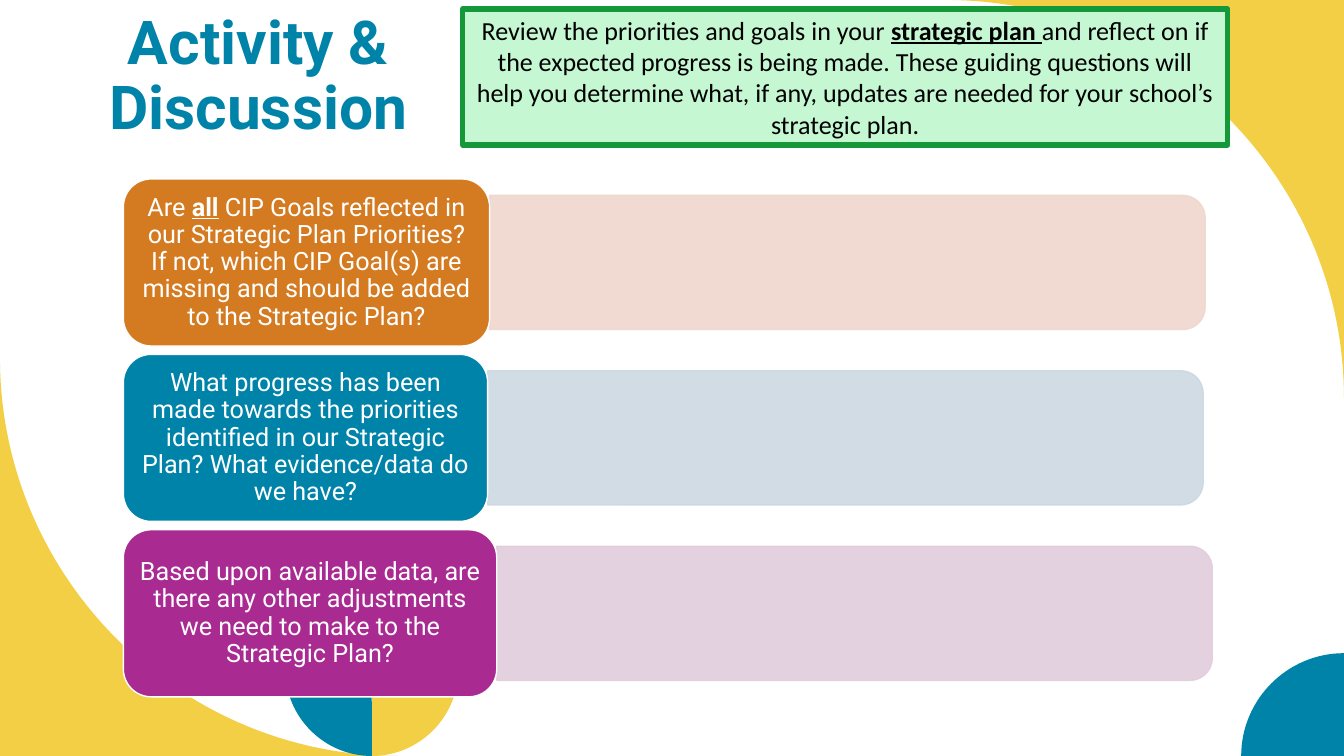
import pptx
import pptx.dml.color
import pptx.enum.shapes
import pptx.enum.text
import pptx.oxml
import pptx.oxml.ns
import pptx.util

Cm = pptx.util.Cm
Pt = pptx.util.Pt
SHAPE = pptx.enum.shapes.MSO_SHAPE
qn = pptx.oxml.ns.qn

WIDTH, HEIGHT = 33.87, 19.05
COLORS = {
    "yellow": "F3CF45", "teal": "0083A9", "white": "FFFFFF", "black": "000000",
    "mint": "C4F7D2", "green": "159839", "orange": "D47B22", "plum": "A92A91",
    "peach": "EFD7CD", "mist": "CCD9E2", "pink": "E2CDDC",
}

# Pill width, pill colour, bar colour, text runs as (text, emphasis)
ROWS = [
    (9.23, "orange", "peach", [
        ("Are ", False), ("all", True),
        (" CIP Goals reflected in our Strategic Plan Priorities? If not, which "
         "CIP Goal(s) are missing and should be added to the Strategic Plan?", False)]),
    (9.18, "teal", "mist", [
        ("What progress has been made towards the priorities identified in our "
         "Strategic Plan? What evidence/data do we have?", False)]),
    (9.41, "plum", "pink", [
        ("Based upon available data, are there any other adjustments we need to "
         "make to the Strategic Plan?", False)]),
]
PROMPT = [
    ("Review the priorities and goals in your ", False), ("strategic plan ", True),
    ("and reflect on if the expected progress is being made. These guiding "
     "questions will help you determine what, if any, updates are needed for "
     "your school’s strategic plan.", False),
]
LEFT, TOP, TALL, STEP = 3.11, 4.51, 4.21, 4.42
BAR_WIDE, BAR_TALL = 18.03, 3.38
ROUND = 0.55  # reach of the handles of a quarter circle


def color(name):
    return pptx.dml.color.RGBColor.from_string(COLORS[name])


def paint(shape, fill, line=None, weight=1):
    shape.shadow.inherit = False
    shape.fill.solid()
    shape.fill.fore_color.rgb = color(fill)
    if line:
        shape.line.color.rgb = color(line)
        shape.line.width = Pt(weight)
    else:
        shape.line.fill.background()


def fade(shape, percent):
    """Set the opacity of the fill and the line."""
    for node in shape._element.spPr.iter(qn("a:srgbClr")):
        alpha = pptx.oxml.parse_xml(
            f'<a:alpha {pptx.oxml.ns.nsdecls("a")} val="{percent * 1000}"/>')
        node.append(alpha)


def write(shape, runs, font, size, ink, margins, space=1.0, bold=False):
    """Fill a shape with centred runs; emphasis is bold and underlined."""
    frame = shape.text_frame
    frame.word_wrap = True
    frame.vertical_anchor = pptx.enum.text.MSO_ANCHOR.MIDDLE
    frame.margin_left = frame.margin_right = Cm(margins[0])
    frame.margin_top = frame.margin_bottom = Cm(margins[1])
    para = frame.paragraphs[0]
    para.alignment = pptx.enum.text.PP_ALIGN.CENTER
    para.line_spacing = space
    for text, strong in runs:
        run = para.add_run()
        run.text = text
        run.font.name = font
        run.font.size = Pt(size)
        run.font.color.rgb = color(ink)
        run.font.bold = bold or strong
        run.font.underline = strong


def curve(start, corner, end):
    """Two handles and the end point of a quarter circle bulging to a corner."""
    grips = [tuple(p + (c - p) * ROUND for p, c in zip(spot, corner))
             for spot in (start, end)]
    return grips + [end]


def blob(slide, start, parts, fill):
    """Draw an outline whose parts are single points or quarter circles."""
    spots = [(Cm(x), Cm(y)) for part in parts for x, y in part]
    form = slide.shapes.build_freeform(Cm(start[0]), Cm(start[1]), scale=1.0)
    form.add_line_segments(spots, close=True)
    shape = form.convert_to_shape()
    lines = list(shape._element.spPr.iter(qn("a:lnTo")))
    for part in parts:
        group, lines = lines[:len(part)], lines[len(part):]
        if len(group) == 3:
            bend = pptx.oxml.parse_xml(
                f'<a:cubicBezTo {pptx.oxml.ns.nsdecls("a")}/>')
            group[0].addprevious(bend)
            for line in group:
                bend.append(line[0])
                line.getparent().remove(line)
    paint(shape, fill)


def wedge(slide, tip, start, bulge, end, fill):
    blob(slide, tip, [[start], curve(start, bulge, end)], fill)


def decor(slide):
    big, small, leaf, stem = 10.03, 2.59, 2.18, 9.37
    right, low = WIDTH - big, HEIGHT - big
    wedge(slide, (WIDTH, 0), (right, 0), (WIDTH, 0), (WIDTH, big), "yellow")
    wedge(slide, (0, HEIGHT), (0, low), (0, HEIGHT), (big, HEIGHT), "yellow")
    edge, rim = WIDTH - small, HEIGHT - small
    wedge(slide, (WIDTH, HEIGHT), (edge, HEIGHT), (edge, rim), (WIDTH, rim), "teal")
    top, side, neck = 15.52, HEIGHT - leaf, 17.7
    for x, fill in ((stem + leaf, "yellow"), (stem - leaf, "teal")):
        blob(slide, (x, top), [
            [(x, side)],
            curve((x, side), (x, HEIGHT), (stem, HEIGHT)),
            [(stem, neck)],
            curve((stem, neck), (stem, top), (x, top)),
        ], fill)


def header(slide):
    box = slide.shapes.add_shape(SHAPE.RECTANGLE, Cm(11.66), Cm(0.23), Cm(19.28), Cm(3.42))
    paint(box, "mint", "green", 4)
    write(box, PROMPT, "Calibri", 18.6, "black", (0.25, 0.13))
    title = slide.shapes.add_textbox(Cm(1.48), Cm(0.24), Cm(10.06), Cm(3.42))
    write(title, [("Activity & Discussion", False)], "Roboto", 43.2, "teal",
          (0.25, 0.13), 0.9, True)


def row(slide, top, wide, fill, tint, runs):
    """Draw a question pill with an answer bar at its right edge."""
    x = LEFT + wide + (BAR_WIDE - BAR_TALL) / 2
    y = top + (TALL - BAR_WIDE) / 2
    bar = slide.shapes.add_shape(
        SHAPE.ROUND_2_SAME_RECTANGLE, Cm(x), Cm(y), Cm(BAR_TALL), Cm(BAR_WIDE))
    bar.rotation = 90
    paint(bar, tint, tint)
    fade(bar, 90)
    pill = slide.shapes.add_shape(
        SHAPE.ROUNDED_RECTANGLE, Cm(LEFT), Cm(top), Cm(wide), Cm(TALL))
    paint(pill, fill, "white")
    write(pill, runs, "Roboto", 18, "white", (0.19, 0.1), 0.9)


def main():
    deck = pptx.Presentation()
    deck.slide_width, deck.slide_height = Cm(WIDTH), Cm(HEIGHT)
    slide = deck.slides.add_slide(deck.slide_layouts[6])
    decor(slide)
    header(slide)
    for i, item in enumerate(ROWS):
        row(slide, TOP + i * STEP, *item)
    deck.save("out.pptx")


if __name__ == "__main__":
    main()
